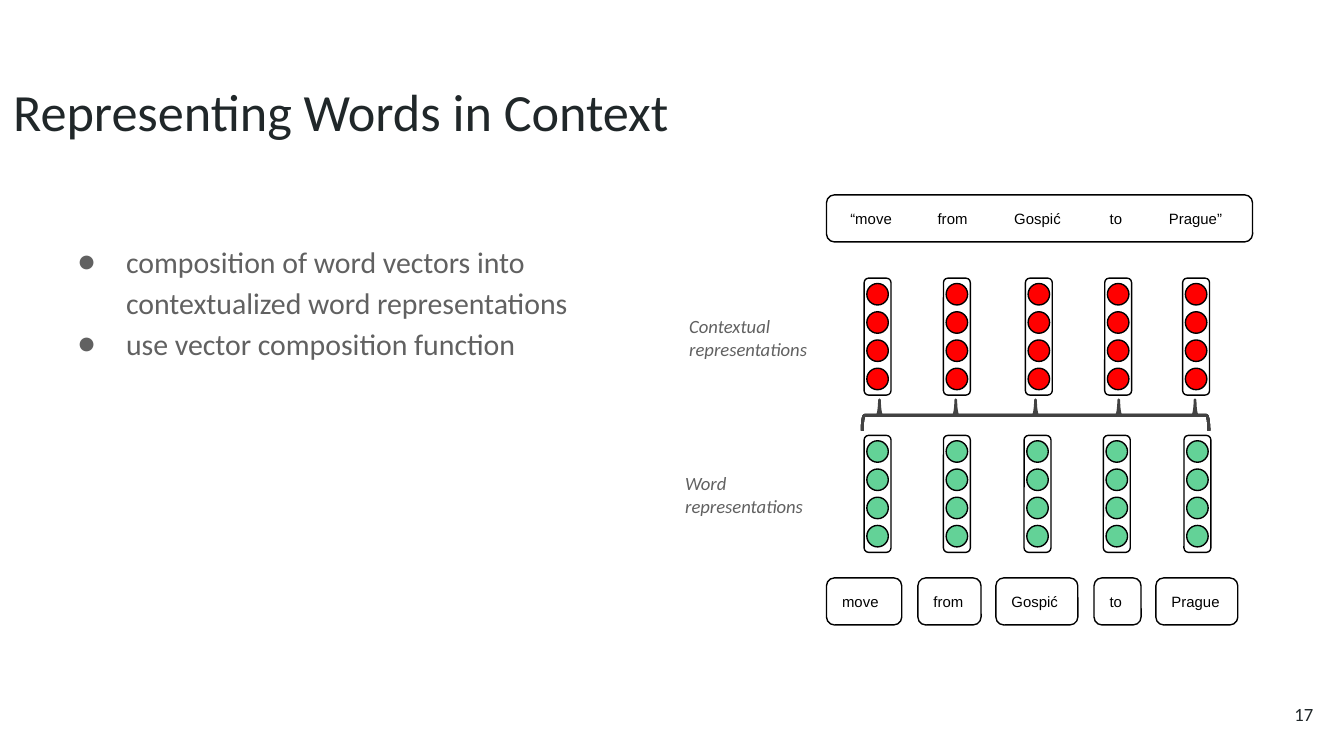
from dataclasses import dataclass

from lxml import etree
from pptx import Presentation
from pptx.dml.color import RGBColor
from pptx.enum.shapes import MSO_SHAPE
from pptx.enum.text import MSO_ANCHOR, PP_ALIGN
from pptx.oxml.ns import qn
from pptx.util import Inches, Pt

ROUNDED = MSO_SHAPE.ROUNDED_RECTANGLE
OVAL = MSO_SHAPE.OVAL
BRACE = MSO_SHAPE.RIGHT_BRACE
TOP = MSO_ANCHOR.TOP
MIDDLE = MSO_ANCHOR.MIDDLE
LEFT = PP_ALIGN.LEFT
RIGHT = PP_ALIGN.RIGHT

BLACK = RGBColor(0x00, 0x00, 0x00)
INK = RGBColor(0x20, 0x27, 0x29)
GRAY = RGBColor(0x61, 0x61, 0x61)
DARK_GRAY = RGBColor(0x42, 0x42, 0x42)
GREEN = RGBColor(0x63, 0xD2, 0x97)
RED = RGBColor(0xFF, 0x00, 0x00)


@dataclass(frozen=True)
class Area:
    left: float
    top: float
    width: float
    height: float


@dataclass(frozen=True)
class Style:
    size: float
    color: RGBColor
    name: str = "Calibri"
    italic: bool = False


@dataclass(frozen=True)
class VectorRow:
    top: float
    color: RGBColor
    lefts: tuple[float, ...]


@dataclass(frozen=True)
class Word:
    text: str
    left: float
    width: float


TITLE = Style(28, INK)
BODY = Style(16, GRAY)
LABEL = Style(10, GRAY, italic=True)
NUMBER = Style(10, INK)
TOKEN = Style(8, BLACK, "Arial")

VECTOR_ROWS = (
    VectorRow(3.24, GREEN, (6.43, 7.02, 7.62, 8.21, 8.81)),
    VectorRow(2.07, RED, (6.43, 7.02, 7.63, 8.22, 8.80)),
)
WORDS = (
    Word("move", 6.15, 0.56),
    Word("from", 6.83, 0.47),
    Word("Gospić", 7.41, 0.61),
    Word("to", 8.14, 0.35),
    Word("Prague", 8.6, 0.61),
)
SENTENCE = "“" + "\t".join(word.text for word in WORDS) + "”"
SENTENCE_TABS = (0.65, 1.22, 1.93, 2.37)
BRACE_POINTS = (0.5, 0.74, 0.96, 0.27, 0.05)
BULLETS = (
    "composition of word vectors into contextualized word representations",
    "use vector composition function",
)


def place(area: Area) -> tuple:
    return tuple(Inches(n) for n in (area.left, area.top, area.width, area.height))


def style_paragraph(para, style: Style) -> None:
    font = para.font
    font.size = Pt(style.size)
    font.name = style.name
    font.italic = style.italic
    font.color.rgb = style.color


def prepare_frame(box, anchor, left_inset: float = 0.1):
    frame = box.text_frame
    frame.word_wrap = True
    frame.vertical_anchor = anchor
    frame.margin_left = Inches(left_inset)
    frame.margin_top = frame.margin_right = frame.margin_bottom = Inches(0.1)
    return frame


def add_text(page, area: Area, text: str, style: Style, anchor=MIDDLE, align=LEFT):
    box = page.shapes.add_textbox(*place(area))
    para = prepare_frame(box, anchor).paragraphs[0]
    para.text = text
    para.alignment = align
    style_paragraph(para, style)
    return para


def add_outline(page, kind, area: Area, line=BLACK, weight: float = 0.75):
    shape = page.shapes.add_shape(kind, *place(area))
    shape.shadow.inherit = False
    shape.fill.background()
    shape.line.color.rgb = line
    shape.line.width = Pt(weight)
    return shape


def add_token(page, area: Area, text: str, left_inset: float = 0.1):
    shape = add_outline(page, ROUNDED, area)
    para = prepare_frame(shape, MIDDLE, left_inset).paragraphs[0]
    para.text = text
    para.alignment = LEFT
    return para


def add_vector(page, left: float, top: float, color: RGBColor) -> None:
    for index in range(4):
        area = Area(left + 0.02, top + 0.04 + 0.21 * index, 0.16, 0.16)
        circle = add_outline(page, OVAL, area)
        circle.fill.solid()
        circle.fill.fore_color.rgb = color
    add_outline(page, ROUNDED, Area(left, top, 0.2, 0.87))


def add_tabs(para, positions: tuple[float, ...]) -> None:
    tabs = etree.SubElement(para._p.get_or_add_pPr(), qn("a:tabLst"))
    for position in positions:
        etree.SubElement(tabs, qn("a:tab"), pos=str(Inches(position)), algn="l")


def add_bullet(para) -> None:
    props = para._p.get_or_add_pPr()
    props.set("marL", str(Inches(0.5)))
    props.set("indent", str(Inches(-0.36)))
    color = etree.SubElement(props, qn("a:buClr"))
    etree.SubElement(color, qn("a:srgbClr"), val=str(GRAY))
    etree.SubElement(props, qn("a:buFont"), typeface="Calibri")
    etree.SubElement(props, qn("a:buChar"), char="●")


def add_bullets(page, area: Area, lines: tuple[str, ...]) -> None:
    frame = prepare_frame(page.shapes.add_textbox(*place(area)), MIDDLE)
    for index, line in enumerate(lines):
        para = frame.add_paragraph() if index else frame.paragraphs[0]
        para.text = line
        add_bullet(para)
        para.line_spacing = 1.15
        style_paragraph(para, BODY)


def main() -> None:
    deck = Presentation()
    deck.slide_width = Inches(10)
    deck.slide_height = deck.slide_width * 9 // 16
    page = deck.slides.add_slide(deck.slide_layouts[6])

    add_text(page, Area(0, 0.49, 9.32, 0.63), "Representing Words in Context", TITLE, TOP)
    add_bullets(page, Area(0.34, 1.27, 4.66, 1.92), BULLETS)

    sentence = add_token(page, Area(6.15, 1.45, 3.17, 0.35), SENTENCE, 0.16)
    add_tabs(sentence, SENTENCE_TABS)
    style_paragraph(sentence, TOKEN)
    for word in WORDS:
        token = add_token(page, Area(word.left, 4.3, word.width, 0.35), word.text)
        style_paragraph(token, TOKEN)

    for row in VECTOR_ROWS:
        for left in row.lefts:
            add_vector(page, left, row.top, row.color)

    for point in BRACE_POINTS:
        brace = add_outline(page, BRACE, Area(7.59, 1.8, 0.23, 2.58), DARK_GRAY, 1.5)
        brace.rotation = 270
        brace.adjustments[0] = 0.08
        brace.adjustments[1] = point

    for area, text in (
        (Area(5.03, 2.3, 1.31, 0.42), "Contextual representations"),
        (Area(5, 3.47, 1.24, 0.42), "Word representations"),
    ):
        label = add_text(page, area, text, LABEL)
        label.space_after = Pt(16)
    add_text(page, Area(9.27, 5.1, 0.6, 0.43), "17", NUMBER, align=RIGHT)

    deck.save("out.pptx")


if __name__ == "__main__":
    main()
